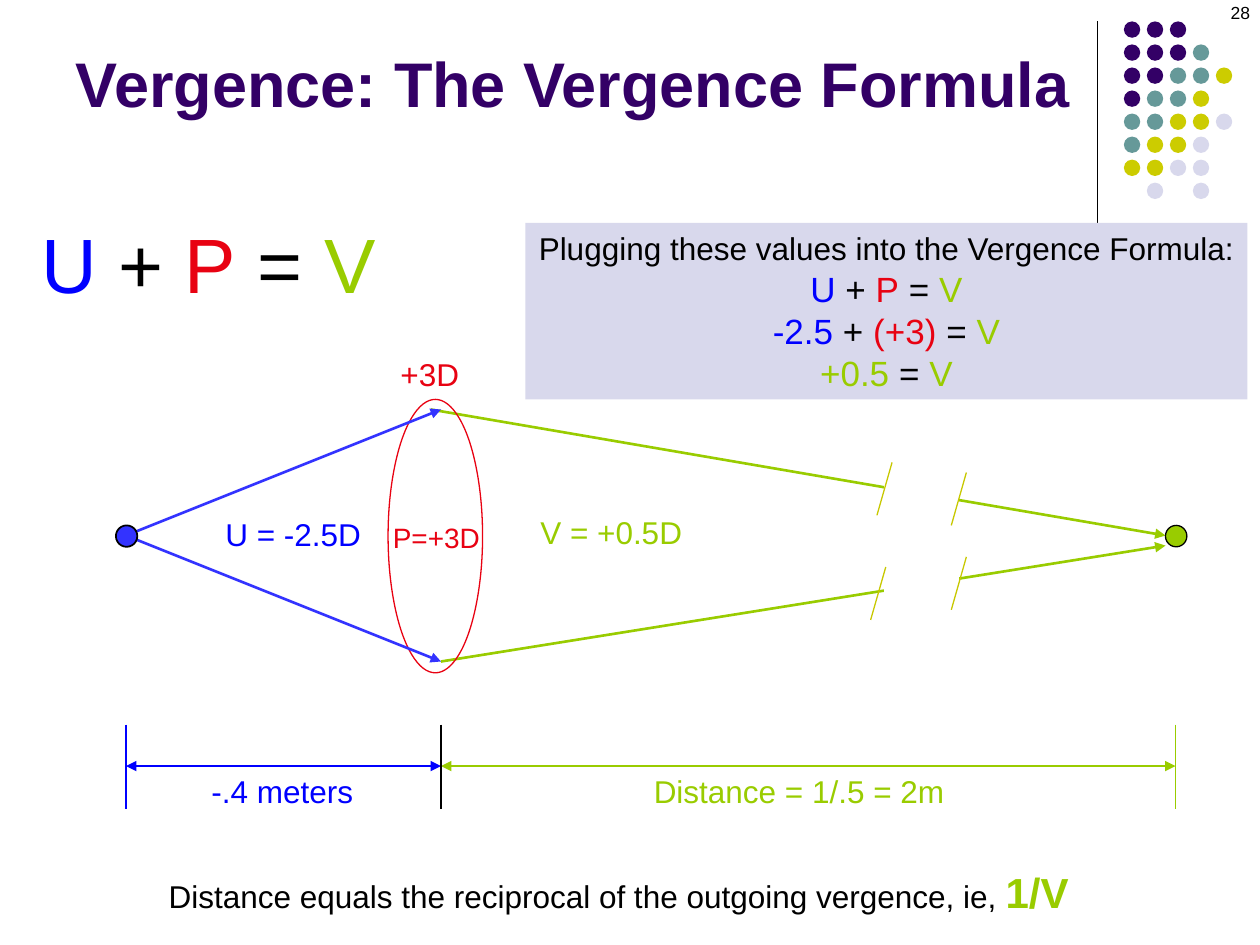
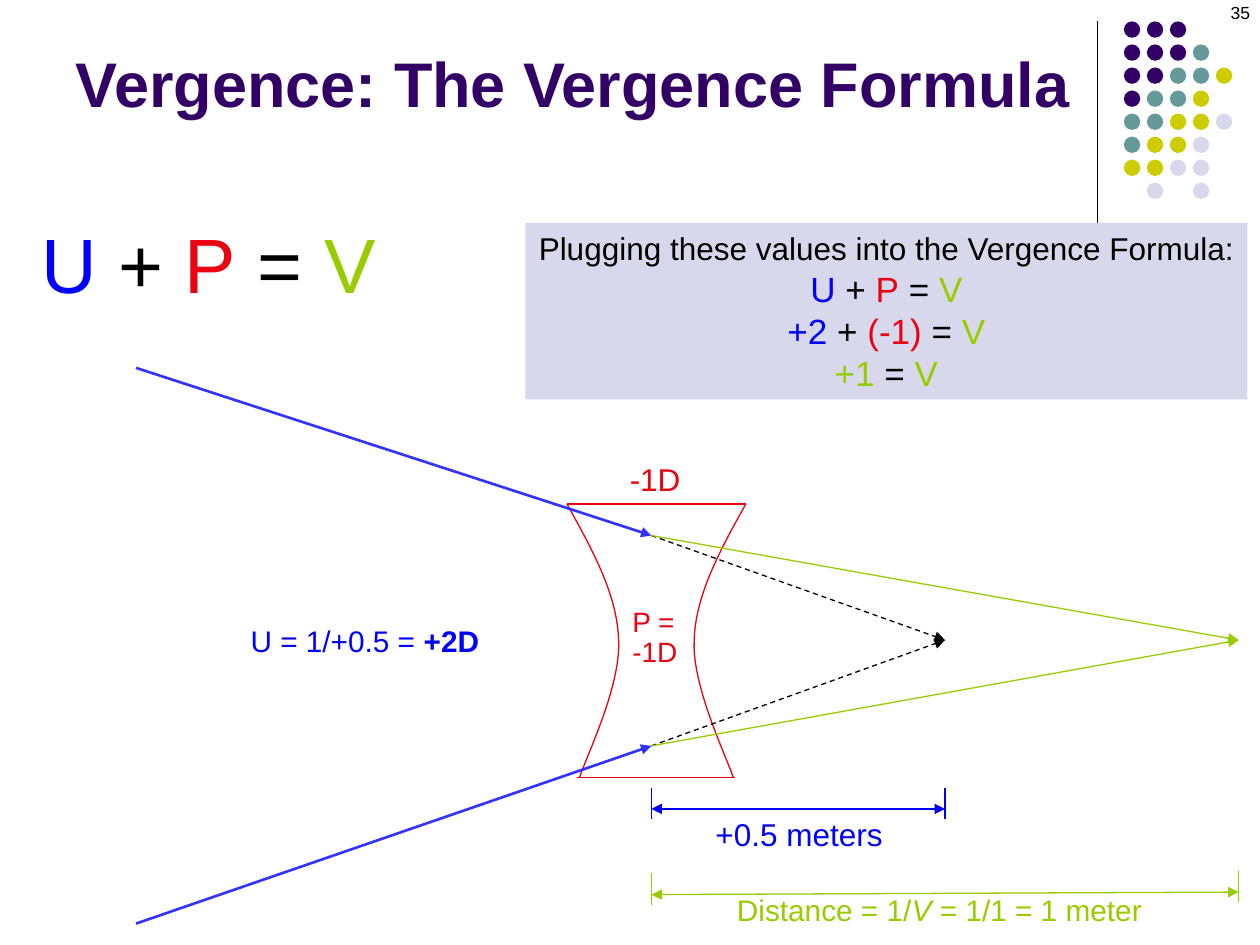
from lxml import etree
from pptx import Presentation
from pptx.dml.color import RGBColor
from pptx.enum import dml, shapes, text
from pptx.oxml import ns
from pptx.util import Inches, Pt

COLOURS = {
    "title": "330066", "teal": "669999", "olive": "CCCC00", "lilac": "D8D8EC",
    "black": "000000", "white": "FFFFFF", "incoming": "0000FF", "ray": "3333FF",
    "lens": "E80212", "outgoing": "99CC00", "break": "C8C800",
}
COLOURS = {name: RGBColor.from_string(value) for name, value in COLOURS.items()}
FONT = "Arial"
FORMULA = [("U", "incoming"), (" + ", "black"), ("P", "lens"), (" = ", "black"), ("V", "outgoing")]
DOT_ROWS = ["DDD", "DDDT", "DDTTY", "DTTY", "TTYYL", "TYYL", "YYLL", " L L"]
DOT_COLOURS = {"D": "title", "T": "teal", "Y": "olive", "L": "lilac"}


def add_text(page, place, paragraphs, size=18, align=text.PP_ALIGN.LEFT, wrap=False):
    box = page.shapes.add_textbox(*map(Inches, place))
    frame = box.text_frame
    frame.word_wrap = wrap
    frame.auto_size = text.MSO_AUTO_SIZE.NONE if wrap else text.MSO_AUTO_SIZE.SHAPE_TO_FIT_TEXT
    for index, spans in enumerate(paragraphs):
        para = frame.paragraphs[0] if index == 0 else frame.add_paragraph()
        para.alignment = align
        for words, colour, *style in spans:
            span = para.add_run()
            span.text = words
            span.font.name = FONT
            span.font.size = Pt(style[0] if style else size)
            span.font.bold = "bold" in style
            span.font.italic = "italic" in style
            span.font.color.rgb = COLOURS[colour]
    return box


def add_line(page, start, end, colour, width=0.75, arrows=(), dashed=False):
    line = page.shapes.add_connector(shapes.MSO_CONNECTOR.STRAIGHT, *map(Inches, (*start, *end)))
    line.line.color.rgb = COLOURS[colour]
    line.line.width = Pt(width)
    if dashed:
        line.line.dash_style = dml.MSO_LINE.DASH
    for arrow in arrows:
        etree.SubElement(line.line._get_or_add_ln(), ns.qn(f"a:{arrow}End"), type="triangle")
    etree.SubElement(line._element.spPr, ns.qn("a:effectLst"))


deck = Presentation()
deck.slide_width, deck.slide_height = Inches(10), Inches(7.5)

pages = []
for number, substituted, result in [
    ("28", ("-2.5", "(+3)"), "+0.5"),
    ("35", ("+2", "(-1)"), "+1"),
]:
    page = deck.slides.add_slide(deck.slide_layouts[5])
    pages.append(page)

    add_line(page, (8.71, 0.17), (8.71, 1.83), "black")
    for row, pattern in enumerate(DOT_ROWS):
        for column, letter in enumerate(pattern):
            if letter == " ":
                continue
            dot = page.shapes.add_shape(
                shapes.MSO_SHAPE.OVAL, Inches(8.92 + column * 0.73 / 4),
                Inches(0.17 + row * 1.28 / 7), Inches(0.13), Inches(0.13))
            dot.shadow.inherit = False
            dot.fill.solid()
            dot.fill.fore_color.rgb = COLOURS[DOT_COLOURS[letter]]
            dot.line.fill.background()

    title = page.shapes.title
    title.left, title.top, title.width, title.height = map(Inches, (0.5, 0.13, 8.25, 0.87))
    title.text_frame.text = "Vergence: The Vergence Formula"
    title.text_frame.auto_size = text.MSO_AUTO_SIZE.NONE
    title.text_frame.vertical_anchor = text.MSO_ANCHOR.BOTTOM
    para = title.text_frame.paragraphs[0]
    para.alignment = text.PP_ALIGN.LEFT
    font = para.runs[0].font
    font.name, font.size, font.bold = FONT, Pt(36), True
    font.color.rgb = COLOURS["title"]

    add_text(page, (0.23, 1.67, 2.85, 0.83), [FORMULA], 44)
    incoming, power = substituted
    panel = add_text(page, (4.17, 1.77, 5.73, 1.4), [
        [("Plugging these values into the Vergence Formula:", "black", 18)],
        FORMULA,
        [(incoming, "incoming"), (" + ", "black"), (power, "lens"), (" = ", "black"), ("V", "outgoing")],
        [(result + " ", "outgoing"), ("=", "black"), (" V", "outgoing")],
    ], 20, text.PP_ALIGN.CENTER)
    panel.fill.solid()
    panel.fill.fore_color.rgb = COLOURS["lilac"]
    add_text(page, (7.69, -0.03, 2.33, 0.5), [[(number, "black")]], 10, text.PP_ALIGN.RIGHT, True)

convex, concave = pages
both = ("head", "tail")

for left, right, colour in [(1, 3.5, "incoming"), (3.5, 9.33, "outgoing")]:
    add_line(convex, (left, 6.08), (right, 6.08), colour, arrows=both)
for x, colour in [(1, "incoming"), (3.5, "black"), (9.33, "outgoing")]:
    add_line(convex, (x, 5.75), (x, 6.42), colour)

for start, end in [((3.42, 3.25), (9.25, 4.25)), ((3.5, 5.25), (9.25, 4.33))]:
    add_line(convex, start, end, "outgoing", 1.5, ["tail"])

for place, fill, outline, width in [
    ((9.25, 4.17, 0.17, 0.17), "outgoing", "black", 0.75),
    ((3.08, 3.17, 0.75, 2.17), None, "lens", 0.75),
    ((0.92, 4.17, 0.17, 0.17), "ray", "black", 1),
    ((7.03, 3.58, 0.57, 1.42), "white", "white", 2),
]:
    if fill == "ray":
        for y in (3.25, 5.25):
            add_line(convex, (1, 4.25), (3.5, y), "ray", 1.5, ["tail"])
    kind = shapes.MSO_SHAPE.RECTANGLE if fill == "white" else shapes.MSO_SHAPE.OVAL
    shape = convex.shapes.add_shape(kind, *map(Inches, place))
    shape.shadow.inherit = False
    if fill:
        shape.fill.solid()
        shape.fill.fore_color.rgb = COLOURS[fill]
    else:
        shape.fill.background()
    shape.line.color.rgb = COLOURS[outline]
    shape.line.width = Pt(width)

for x, y in [(7.08, 3.67), (7.67, 3.75), (7.03, 4.5), (7.67, 4.42)]:
    add_line(convex, (x, y), (x - 0.12, y + 0.42), "break")

for place, words, colour, size in [
    ((5.09, 6.08, 2.51, 0.4), "Distance = 1/.5 = 2m", "outgoing", 18),
    ((1.58, 6.08, 1.33, 0.4), "-.4 meters", "incoming", 18),
    ((1.69, 4.04, 1.29, 0.4), "U = -2.5D", "incoming", 18),
    ((4.19, 4.02, 1.34, 0.4), "V = +0.5D", "outgoing", 18),
    ((3.08, 2.77, 0.67, 0.4), "+3D", "lens", 18),
    ((3.02, 4.08, 0.9, 0.37), "P=+3D", "lens", 16),
]:
    add_text(convex, place, [[(words, colour)]], size)
add_text(convex, (1.24, 6.83, 7.34, 0.5), [[
    ("Distance equals the reciprocal of the outgoing vergence, ie, ", "black"),
    ("1/V", "outgoing", 24, "bold")]])

upper_curve = [(4.5, 4), (4.7, 4.36), (4.9, 4.72), (4.91, 5.08)]
lower_curve = [(4.91, 5.08), (4.93, 5.44), (4.66, 5.99), (4.6, 6.17)]
steps = 20
edge = []
for curve in (upper_curve, lower_curve):
    for step in range(steps + 1):
        t = step / steps
        weights = ((1 - t) ** 3, 3 * t * (1 - t) ** 2, 3 * t * t * (1 - t), t ** 3)
        edge.append([sum(w * point[axis] for w, point in zip(weights, curve)) for axis in (0, 1)])
mirrored_edge = [(10.42 - x, y) for x, y in edge]
for side in (edge, mirrored_edge):
    points = [(Inches(x), Inches(y)) for x, y in side]
    builder = concave.shapes.build_freeform(*points[0])
    builder.add_line_segments(points[1:], close=False)
    lens_side = builder.convert_to_shape()
    lens_side.shadow.inherit = False
    lens_side.fill.background()
    lens_side.line.color.rgb = COLOURS["lens"]
    lens_side.line.width = Pt(0.75)
for left, right, y in [(4.5, 5.92, 4), (4.58, 5.83, 6.17)]:
    add_line(concave, (left, y), (right, y), "lens")

for source_y, lens_y in [(2.92, 4.25), (7.33, 5.92)]:
    add_line(concave, (1.08, source_y), (5.17, lens_y), "ray", 1.5, ["tail"])
    add_line(concave, (5.17, lens_y), (7.5, 5.08), "black", arrows=["tail"], dashed=True)
    add_line(concave, (5.17, lens_y), (9.83, 5.08), "outgoing", arrows=["tail"])

for start, end, rise, colour in [
    ((5.17, 6.42), (7.5, 6.42), 0.17, "incoming"),
    ((5.17, 7.1), (9.83, 7.08), 0.17, "outgoing"),
]:
    add_line(concave, start, end, colour, arrows=both)
    for x, y in (start, end):
        add_line(concave, (x, y - rise), (x, y - rise + 0.25), colour)

add_text(concave, (1.89, 4.89, 2.03, 0.39), [[
    ("U = 1/+0.5 = ", "incoming"), ("+2D", "incoming", 17, "bold")]], 17)
add_text(concave, (4.9, 3.6, 0.6, 0.4), [[("-1D", "lens")]])
add_text(concave, (5.58, 6.42, 1.53, 0.4), [[("+0.5 meters", "incoming")]])
add_text(concave, (5.75, 7.03, 3.42, 0.38), [[
    ("Distance = 1/", "outgoing"), ("V", "outgoing", 17, "italic"),
    (" = 1/1 = 1 meter", "outgoing")]], 17)
power_label = add_text(concave, (4.92, 4.78, 0.56, 0.58), [[("P =", "lens")], [("-1D", "lens")]], 16)
for para in power_label.text_frame.paragraphs:
    para.line_spacing = Pt(17)

deck.save("out.pptx")
